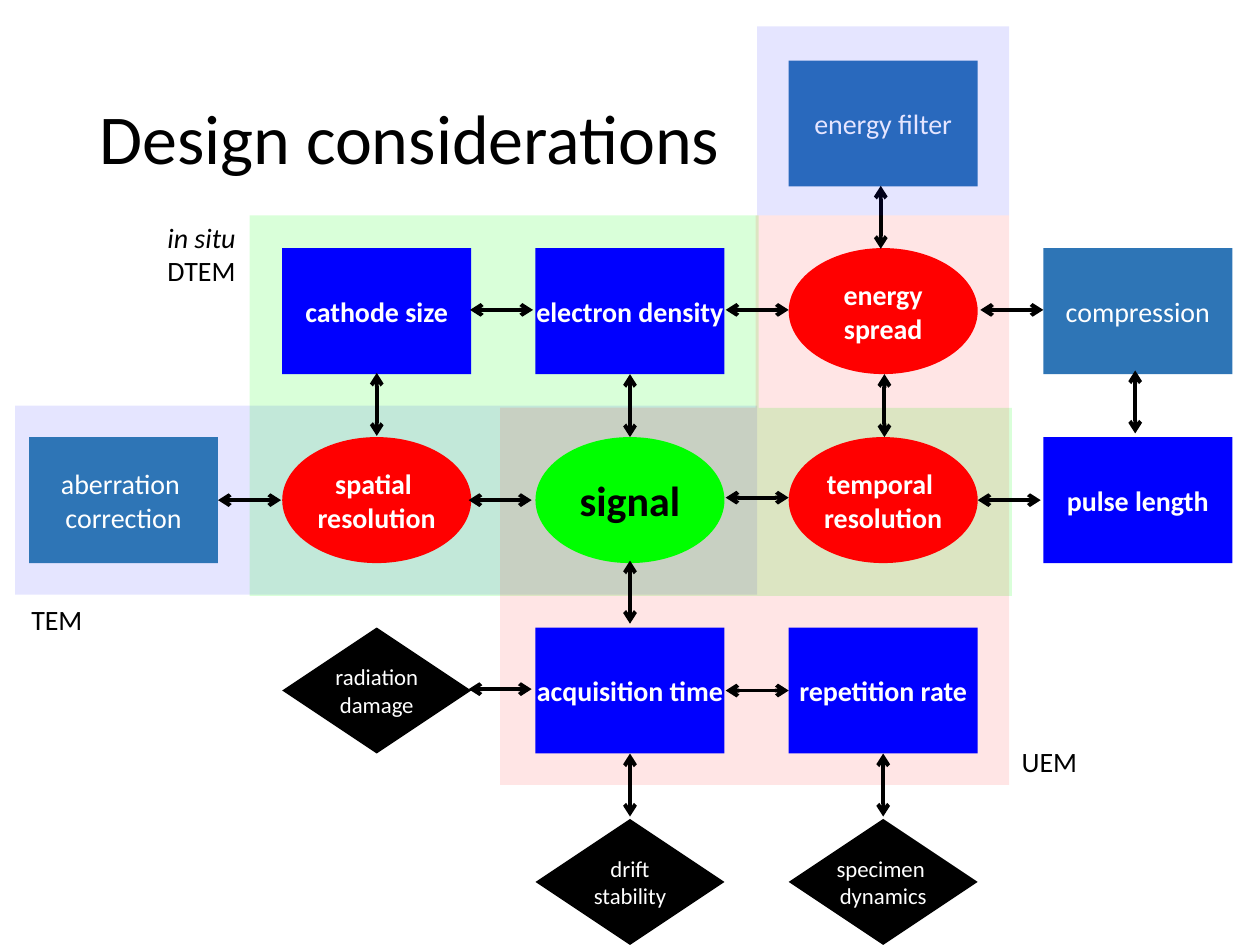
"""Build the "Design considerations" slide, a map of linked microscope parameters."""
from lxml import etree
from pptx import Presentation
from pptx.dml.color import RGBColor
from pptx.enum import shapes, text
from pptx.oxml import ns
from pptx.util import Pt

KIND = shapes.MSO_SHAPE
BLUE, STEEL, RED, GREEN = "0000FF", "2E75B6", "FF0000", "00FF00"
BLACK, WHITE = "000000", "FFFFFF"


def add_block(kind, left, top, width, height, fill, opacity=100):
    block = page.shapes.add_shape(kind, Pt(left), Pt(top), Pt(width), Pt(height))
    block.shadow.inherit = False
    block.line.fill.background()
    block.fill.solid()
    block.fill.fore_color.rgb = RGBColor.from_string(fill)
    if opacity < 100:
        tint = block._element.spPr.find(".//" + ns.qn("a:srgbClr"))
        etree.SubElement(tint, ns.qn("a:alpha")).set("val", str(opacity * 1000))
    return block


def write(frame, wording, size, colour, bold=False, align=text.PP_ALIGN.LEFT):
    frame.text = wording
    for para in frame.paragraphs:
        para.alignment = align
        for span in para.runs:
            span.font.name = "Calibri"
            span.font.size = Pt(size)
            span.font.bold = bold
            span.font.color.rgb = RGBColor.from_string(colour)


deck = Presentation()
deck.slide_width, deck.slide_height = Pt(720), Pt(540)
page = deck.slides.add_slide(deck.slide_layouts[5])

title = page.shapes.title
title.left, title.top, title.width, title.height = Pt(49.7), Pt(28.8), Pt(620.6), Pt(104.4)
write(title.text_frame, "Design considerations", 40, BLACK)
title.text_frame.vertical_anchor = text.MSO_ANCHOR.MIDDLE
title.text_frame.paragraphs[0].line_spacing = 0.9

tem_area = add_block(KIND.RECTANGLE, 8.6, 231.8, 424.1, 108, BLUE, 10)
dtem_area = add_block(KIND.CORNER, 142.6, 123.1, 435.6, 217.4, GREEN, 15)
dtem_area.adjustments[0], dtem_area.adjustments[1] = 0.494, 1.338
uem_area = add_block(KIND.CORNER, 285.8, 123.1, 290.9, 325.4, RED, 10)
uem_area.adjustments[0], uem_area.adjustments[1] = 0.741, 0.498
uem_area._element.spPr.find(ns.qn("a:xfrm")).set("flipH", "1")

labels = [
    ("TEM", 10.8, 340.6, 43.9, 26.6),
    ("in situ\nDTEM", 88.6, 122.4, 54, 46),
    ("UEM", 576.7, 421.9, 46.8, 26.6),
]
for wording, left, top, width, height in labels:
    box = page.shapes.add_textbox(Pt(left), Pt(top), Pt(width), Pt(height))
    frame = box.text_frame
    write(frame, wording, 16, BLACK)
    frame.word_wrap = False
    frame.auto_size = text.MSO_AUTO_SIZE.SHAPE_TO_FIT_TEXT
    for para in frame.paragraphs:
        para.runs[0].font.italic = para.text == "in situ"

column_left = [16.6, 161.3, 306, 450.7, 596.2]
row_top = [34.6, 141.8, 249.8, 358.6, 468]
styles = {
    "goal": (KIND.OVAL, RED, 16, WHITE, True),
    "signal": (KIND.OVAL, GREEN, 24, BLACK, True),
    "setting": (KIND.RECTANGLE, BLUE, 16, WHITE, True),
    "device": (KIND.RECTANGLE, STEEL, 16, WHITE, False),
    "limit": (KIND.FLOWCHART_DECISION, BLACK, 13, WHITE, False),
}
nodes = [
    ("device", 3, 0, "energy filter"),
    ("setting", 1, 1, "cathode size"),
    ("setting", 2, 1, "electron density"),
    ("goal", 3, 1, "energy spread"),
    ("device", 4, 1, "compression"),
    ("device", 0, 2, "aberration \ncorrection"),
    ("goal", 1, 2, "spatial \nresolution"),
    ("signal", 2, 2, "signal"),
    ("goal", 3, 2, "temporal \nresolution"),
    ("setting", 4, 2, "pulse length"),
    ("limit", 1, 3, "radiation damage"),
    ("setting", 2, 3, "acquisition time"),
    ("setting", 3, 3, "repetition rate"),
    ("limit", 2, 4, "drift\nstability"),
    ("limit", 3, 4, "specimen \ndynamics"),
]
for style, column, row, wording in nodes:
    kind, fill, size, colour, bold = styles[style]
    node = add_block(kind, column_left[column], row_top[row], 108, 72, fill)
    frame = node.text_frame
    frame.margin_left = frame.margin_right = frame.margin_top = frame.margin_bottom = 0
    frame.vertical_anchor = text.MSO_ANCHOR.MIDDLE
    frame.word_wrap = style != "signal"
    write(frame, wording, size, colour, bold, text.PP_ALIGN.CENTER)

across = [
    (268.6, 177.1), (414.7, 177.1), (560.2, 177.1),
    (124.6, 285.8), (267.8, 285.8), (414.7, 284.4), (558.7, 285.8),
    (267.8, 393.8), (414.7, 394.6),
]
down = [
    (503.3, 106.2), (215.3, 213.1), (360, 213.8), (505.4, 213.8),
    (648.7, 211.7), (360, 320.4), (360, 430.6), (504.7, 430.6),
]
arrows = [(x, y, 36, 0) for x, y in across] + [(x, y, 0, 36) for x, y in down]
for x, y, run, drop in arrows:
    arrow = page.shapes.add_connector(
        shapes.MSO_CONNECTOR.STRAIGHT, Pt(x), Pt(y), Pt(x + run), Pt(y + drop))
    arrow.line.width = Pt(2.25)
    arrow.line.color.rgb = RGBColor.from_string(BLACK)
    outline = arrow._element.spPr.find(ns.qn("a:ln"))
    for end in ("a:headEnd", "a:tailEnd"):
        etree.SubElement(outline, ns.qn(end)).set("type", "arrow")
    etree.SubElement(arrow._element.spPr, ns.qn("a:effectLst"))

filter_area = add_block(KIND.RECTANGLE, 432.7, 15.1, 144, 108, BLUE, 10)

deck.save("out.pptx")
